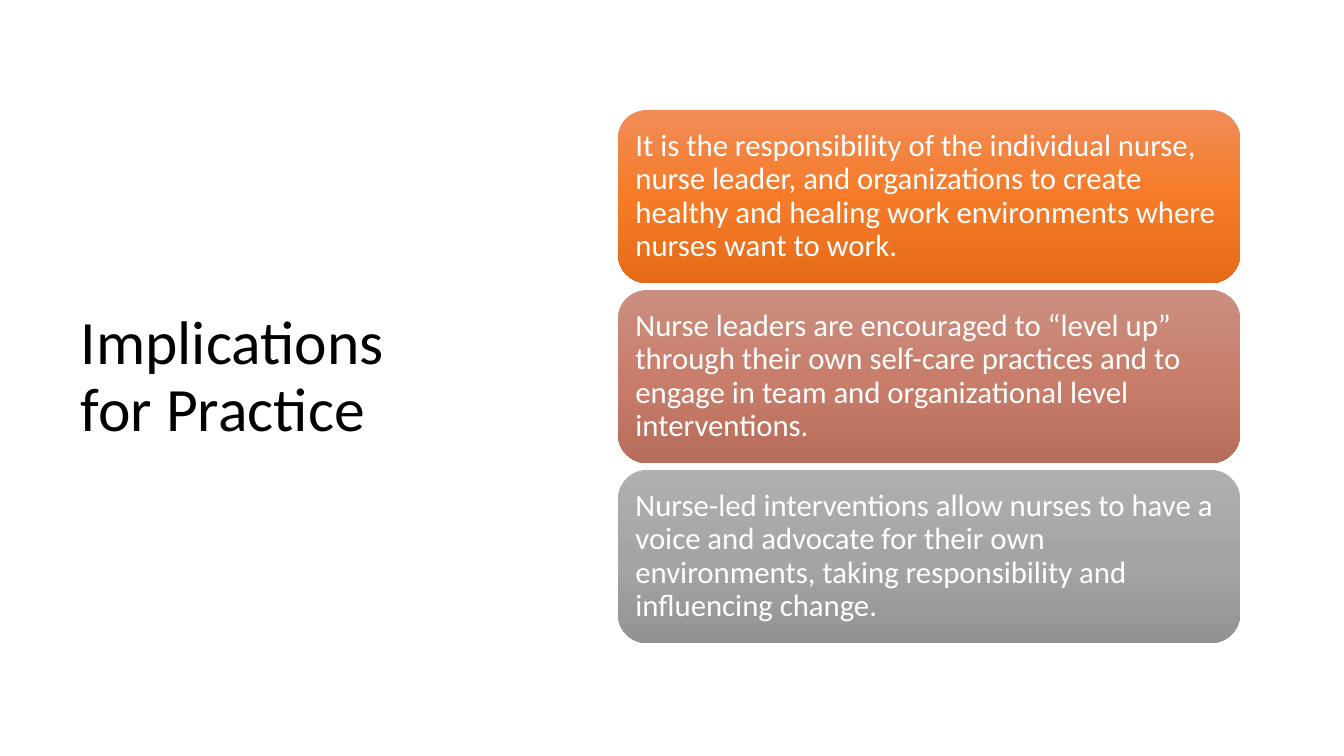
from copy import deepcopy
from dataclasses import dataclass

from pptx import Presentation
from pptx.dml.color import RGBColor
from pptx.enum.shapes import MSO_SHAPE as Shape
from pptx.enum.text import MSO_ANCHOR as Anchor, PP_ALIGN as Align
from pptx.oxml.ns import qn
from pptx.util import Emu, Pt

PX_PER_INCH = 100.8
FONT = "Calibri"
BLACK = RGBColor(0x00, 0x00, 0x00)
WHITE = RGBColor(0xFF, 0xFF, 0xFF)
ORANGES = (RGBColor(0xF1, 0x8C, 0x57), RGBColor(0xF6, 0x7B, 0x28), RGBColor(0xE5, 0x6C, 0x19))
ROSES = (RGBColor(0xCB, 0x8F, 0x81), RGBColor(0xC9, 0x7E, 0x6B), RGBColor(0xB7, 0x6D, 0x5B))
GRAYS = (RGBColor(0xAF, 0xAF, 0xAF), RGBColor(0xA5, 0xA5, 0xA5), RGBColor(0x93, 0x93, 0x93))

CARD_LEFT, CARD_TOP = 618, 110
CARD_WIDTH, CARD_HEIGHT = 622, 173
CARD_PITCH = 180
CARD_INSET = 9


@dataclass(frozen=True)
class Card:
    text: str
    gradient: tuple[RGBColor, RGBColor, RGBColor]


CARDS = (
    Card(
        "It is the responsibility of the individual nurse, nurse leader, and organizations "
        "to create healthy and healing work environments where nurses want to work.",
        ORANGES,
    ),
    Card(
        "Nurse leaders are encouraged to “level up” through their own self-care practices "
        "and to engage in team and organizational level interventions.",
        ROSES,
    ),
    Card(
        "Nurse-led interventions allow nurses to have a voice and advocate for their own "
        "environments, taking responsibility and influencing change.",
        GRAYS,
    ),
)


def px(length: int) -> Emu:
    return Emu(round(length * 914400 / PX_PER_INCH))


def write_text(shape, text: str, size: int, color: RGBColor) -> None:
    frame = shape.text_frame
    frame.word_wrap = True
    frame.vertical_anchor = Anchor.MIDDLE
    frame.text = text
    paragraph = frame.paragraphs[0]
    paragraph.alignment = Align.LEFT
    paragraph.line_spacing = 0.9
    font = paragraph.runs[0].font
    font.name = FONT
    font.size = Pt(size)
    font.color.rgb = color


def fill_gradient(shape, colors: tuple[RGBColor, ...]) -> None:
    shape.fill.gradient()
    shape.fill.gradient_angle = 270
    stop_list = shape._element.spPr.find(qn("a:gradFill")).find(qn("a:gsLst"))
    stop_list.append(deepcopy(stop_list[0]))
    for index, (stop, color) in enumerate(zip(shape.fill.gradient_stops, colors)):
        stop.position = index / (len(colors) - 1)
        stop.color.rgb = color


def add_title(slide, text: str) -> None:
    title = slide.shapes.add_textbox(px(71), px(71), px(377), px(614))
    write_text(title, text, 44, BLACK)


def add_card(slide, card: Card, top: int) -> None:
    shape = slide.shapes.add_shape(
        Shape.ROUNDED_RECTANGLE, px(CARD_LEFT), px(top), px(CARD_WIDTH), px(CARD_HEIGHT)
    )
    shape.shadow.inherit = False
    shape.line.fill.background()
    fill_gradient(shape, card.gradient)
    frame = shape.text_frame
    frame.margin_left = frame.margin_right = px(CARD_INSET)
    frame.margin_top = frame.margin_bottom = px(CARD_INSET)
    write_text(shape, card.text, 22, WHITE)


def main() -> None:
    presentation = Presentation()
    presentation.slide_width = px(1344)
    presentation.slide_height = px(756)
    slide = presentation.slides.add_slide(presentation.slide_layouts[6])
    add_title(slide, "Implications for Practice")
    for row, card in enumerate(CARDS):
        add_card(slide, card, CARD_TOP + row * CARD_PITCH)
    presentation.save("out.pptx")


if __name__ == "__main__":
    main()
